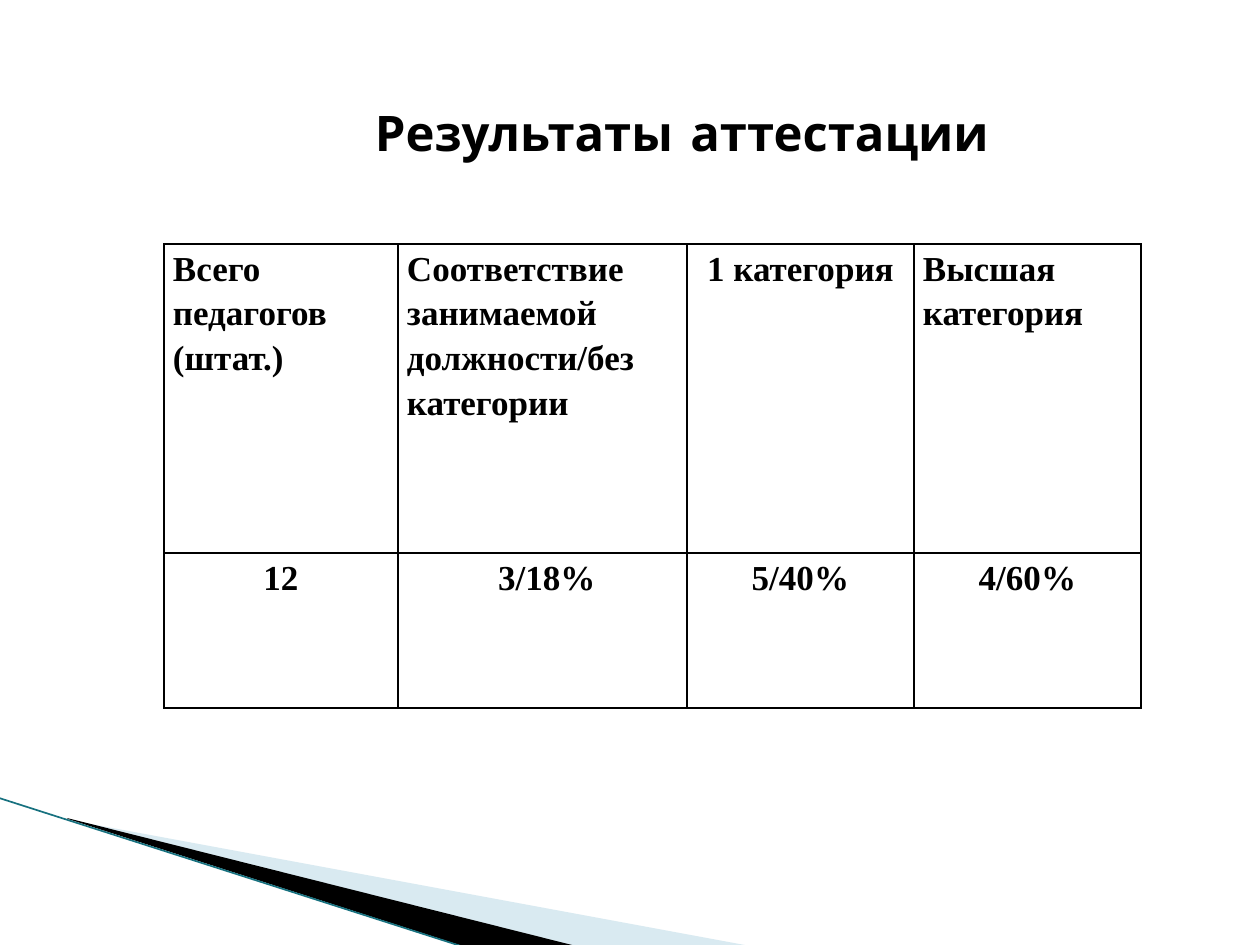
from dataclasses import dataclass

from lxml.etree import SubElement
from pptx import Presentation
from pptx.dml.color import RGBColor
from pptx.enum.text import MSO_AUTO_SIZE as AutoSize, PP_ALIGN as Align
from pptx.oxml import parse_xml
from pptx.oxml.ns import nsdecls, qn
from pptx.util import Pt

EMU_PER_PX = 914400 / 126


@dataclass(frozen=True)
class Theme:
    ink: str = "000000"
    pale_wedge: str = "A0CBDC"
    edge: str = "17717F"
    title_font: str = "Comic Neue"
    table_font: str = "Times New Roman"
    title_size: int = 28
    table_size: int = 20
    line_spacing: float = 1.15
    border_width: int = 1
    edge_width: float = 0.95


THEME = Theme()
HEADERS = [
    ("Всего педагогов (штат.)", Align.JUSTIFY),
    ("Соответствие занимаемой должности/без категории", Align.JUSTIFY),
    ("1 категория", Align.CENTER),
    ("Высшая категория", Align.JUSTIFY),
]
RESULTS = [(value, Align.CENTER) for value in ("12", " 3/18%", "5/40%", "4/60%")]
COLUMN_WIDTHS = (234, 289, 227, 227)
ROW_HEIGHTS = (309, 155)


def px(length):
    return round(length * EMU_PER_PX)


def apply_format(target, values):
    for name, value in values.items():
        setattr(target, name, value)


def write_text(paragraph, text, align, font, size):
    paragraph.alignment = align
    run = paragraph.add_run()
    run.text = text
    apply_format(run.font, {"name": font, "size": Pt(size), "bold": True})
    run.font.color.rgb = RGBColor.from_string(THEME.ink)


def add_wedge(slide, points, color, opacity=100):
    builder = slide.shapes.build_freeform(*points[0], scale=EMU_PER_PX)
    builder.add_line_segments(points[1:], close=True)
    wedge = builder.convert_to_shape()
    wedge.shadow.inherit = False
    wedge.fill.solid()
    wedge.fill.fore_color.rgb = RGBColor.from_string(color)
    wedge.line.fill.background()
    if opacity < 100:
        tint = wedge.fill._xPr.find(".//" + qn("a:srgbClr"))
        SubElement(tint, qn("a:alpha"), val=str(opacity * 1000))


def add_edge(slide, start, end):
    edge = slide.shapes.add_connector(1, *map(px, start + end))
    edge.line.color.rgb = RGBColor.from_string(THEME.edge)
    edge.line.width = Pt(THEME.edge_width)
    SubElement(edge._element.spPr, qn("a:effectLst"))


def add_borders(cell):
    properties = cell._tc.get_or_add_tcPr()
    for position, side in enumerate("LRTB"):
        border = parse_xml(
            f'<a:ln{side} {nsdecls("a")} w="{Pt(THEME.border_width)}">'
            f'<a:solidFill><a:srgbClr val="{THEME.ink}"/></a:solidFill></a:ln{side}>'
        )
        properties.insert(position, border)


def fill_cell(cell, text, align):
    cell.fill.background()
    apply_format(cell, {"margin_left": px(9), "margin_right": px(9),
                        "margin_top": 0, "margin_bottom": 0})
    paragraph = cell.text_frame.paragraphs[0]
    paragraph.line_spacing = THEME.line_spacing
    write_text(paragraph, text, align, THEME.table_font, THEME.table_size)
    add_borders(cell)


def add_results_table(slide, left, top):
    rows = (HEADERS, RESULTS)
    frame = slide.shapes.add_table(
        len(rows), len(COLUMN_WIDTHS), px(left), px(top),
        px(sum(COLUMN_WIDTHS)), px(sum(ROW_HEIGHTS)))
    table = frame.table
    apply_format(table, {"first_row": False, "horz_banding": False})
    for column, width in zip(table.columns, COLUMN_WIDTHS):
        column.width = px(width)
    for row, height, entries in zip(table.rows, ROW_HEIGHTS, rows):
        row.height = px(height)
        for cell, (text, align) in zip(row.cells, entries):
            fill_cell(cell, text, align)


def add_title(slide, text, left, top, width, height):
    title = slide.shapes.add_textbox(*map(px, (left, top, width, height)))
    apply_format(title.text_frame, {"word_wrap": True,
                                    "auto_size": AutoSize.SHAPE_TO_FIT_TEXT})
    write_text(title.text_frame.paragraphs[0], text, Align.CENTER,
               THEME.title_font, THEME.title_size)


def main():
    deck = Presentation()
    apply_format(deck, {"slide_width": px(1260), "slide_height": px(945)})
    slide = deck.slides.add_slide(deck.slide_layouts[6])
    add_wedge(slide, [(69, 820), (750, 946), (575, 946), (69, 819)],
              THEME.pale_wedge, opacity=40)
    add_wedge(slide, [(67, 818), (576, 946), (469, 948), (68, 819)], THEME.ink)
    add_edge(slide, (-1, 798), (467, 948))
    add_results_table(slide, 164, 244)
    add_title(slide, "Результаты аттестации ", 323, 96, 735, 72)
    deck.save("out.pptx")


if __name__ == "__main__":
    main()
